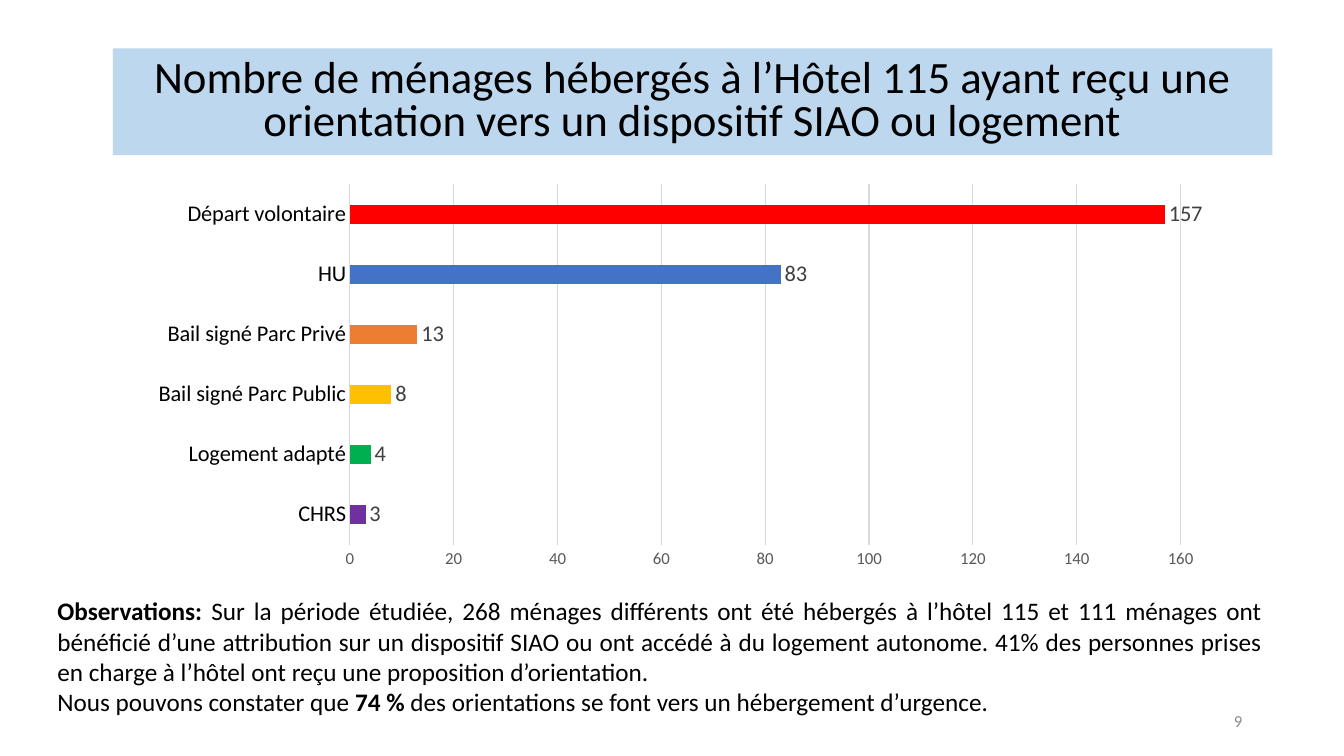
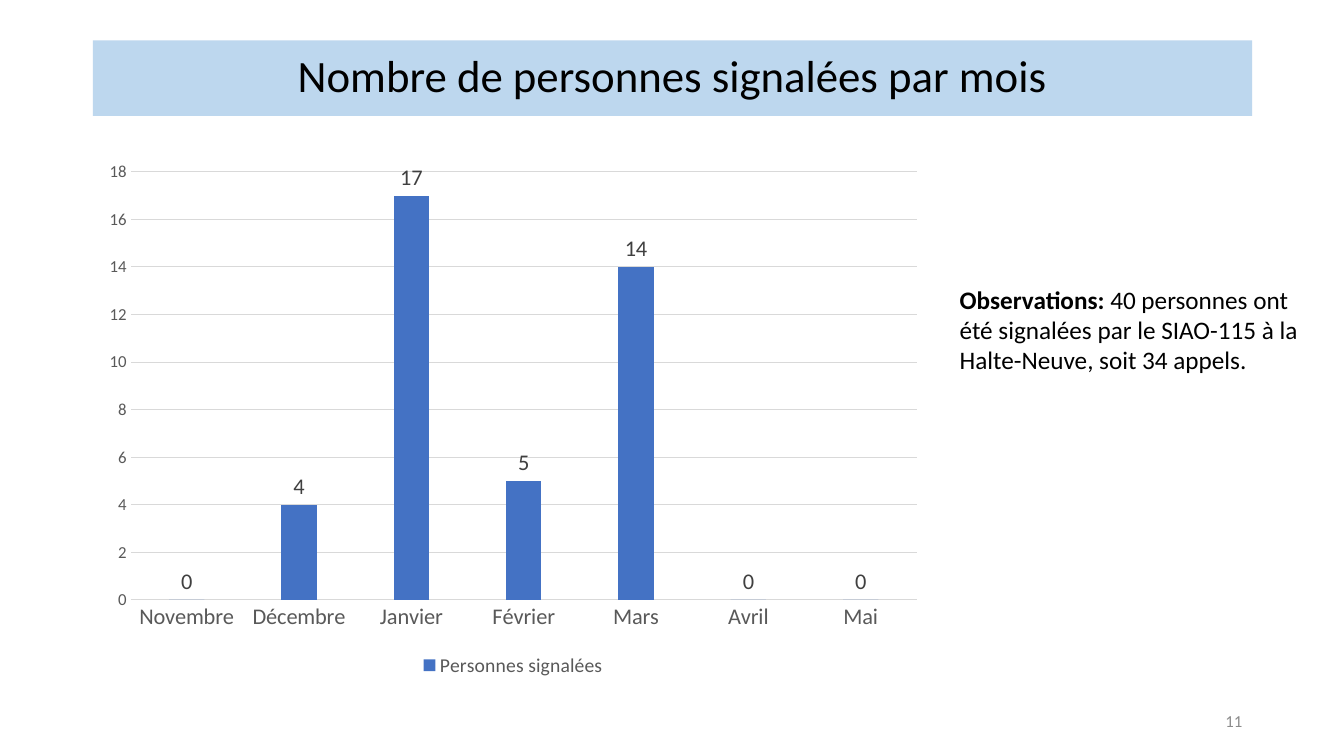
import pptx
import pptx.chart.data
import pptx.dml.color
import pptx.enum.chart
import pptx.enum.text
import pptx.util
from pptx.util import Inches

FONT = "Calibri"
BLACK = "000000"
BAND = "BDD7EE"
GRID = "D9D9D9"
AXIS_TEXT = "595959"
LABEL_TEXT = "404040"
NUMBER_TEXT = "8C8C8C"
BLUE = "4472C4"

ALIGN = pptx.enum.text.PP_ALIGN
CHART_TYPE = pptx.enum.chart.XL_CHART_TYPE


def rgb(value):
    return pptx.dml.color.RGBColor.from_string(value)


def fill_solid(fill, color):
    fill.solid()
    fill.fore_color.rgb = rgb(color)


def set_font(font, size, color):
    font.name = FONT
    font.size = pptx.util.Pt(size)
    font.color.rgb = rgb(color)


def set_line(line, color):
    line.color.rgb = rgb(color)
    line.width = pptx.util.Pt(0.75)


def add_titled_slide(presentation, text, left, top, height, line_spacing):
    slide = presentation.slides.add_slide(presentation.slide_layouts[5])
    title = slide.shapes.title
    title.left, title.top = Inches(left), Inches(top)
    title.width, title.height = Inches(11.5), Inches(height)
    fill_solid(title.fill, BAND)
    frame = title.text_frame
    frame.text = text
    frame.auto_size = pptx.enum.text.MSO_AUTO_SIZE.NONE
    frame.vertical_anchor = pptx.enum.text.MSO_ANCHOR.MIDDLE
    paragraph = frame.paragraphs[0]
    paragraph.alignment = ALIGN.CENTER
    paragraph.line_spacing = line_spacing
    set_font(paragraph.font, 32, BLACK)
    return slide


def add_text(slide, box, paragraphs, size, color, alignment):
    """Add a text box; each paragraph is a list of (text, bold) runs."""
    frame = slide.shapes.add_textbox(*map(Inches, box)).text_frame
    frame.word_wrap = True
    for index, runs in enumerate(paragraphs):
        paragraph = frame.add_paragraph() if index else frame.paragraphs[0]
        paragraph.alignment = alignment
        set_font(paragraph.font, size, color)
        for text, bold in runs:
            run = paragraph.add_run()
            run.text = text
            if bold:
                run.font.bold = True
    return frame


def add_observations(slide, box, paragraphs, alignment):
    add_text(slide, box, paragraphs, 18, BLACK, alignment)


def add_slide_number(slide, number):
    frame = add_text(slide, (9.42, 6.95, 3, 0.4), [[(number, False)]],
                     12, NUMBER_TEXT, ALIGN.RIGHT)
    frame.vertical_anchor = pptx.enum.text.MSO_ANCHOR.MIDDLE


def style_axes(chart, category_color, maximum, step):
    no_tick = pptx.enum.chart.XL_TICK_MARK.NONE
    for axis in (chart.category_axis, chart.value_axis):
        axis.major_tick_mark = axis.minor_tick_mark = no_tick
    category_axis = chart.category_axis
    category_axis.has_major_gridlines = False
    set_font(category_axis.tick_labels.font, 16, category_color)
    set_line(category_axis.format.line, GRID)
    value_axis = chart.value_axis
    value_axis.minimum_scale, value_axis.maximum_scale = 0, maximum
    value_axis.major_unit = step
    value_axis.has_major_gridlines = True
    set_font(value_axis.tick_labels.font, 12, AXIS_TEXT)
    value_axis.format.line.fill.background()
    set_line(value_axis.major_gridlines.format.line, GRID)


def add_bar_chart(slide, chart_type, box, series_name, values,
                  category_color, maximum, step):
    """Add a one-series chart from a mapping of category to value."""
    data = pptx.chart.data.CategoryChartData()
    data.categories = list(values)
    data.add_series(series_name, list(values.values()))
    chart = slide.shapes.add_chart(chart_type, *map(Inches, box), data).chart
    chart.has_title = False
    chart.has_legend = False
    set_font(chart.font, 10, BLACK)
    style_axes(chart, category_color, maximum, step)

    plot = chart.plots[0]
    plot.gap_width = 219
    plot.vary_by_categories = False
    series = plot.series[0]
    series.invert_if_negative = False
    fill_solid(series.format.fill, BLUE)
    labels = series.data_labels
    labels.show_value = True
    labels.position = pptx.enum.chart.XL_LABEL_POSITION.OUTSIDE_END
    set_font(labels.font, 16, LABEL_TEXT)
    return chart


def add_bottom_legend(chart):
    chart.has_legend = True
    chart.legend.position = pptx.enum.chart.XL_LEGEND_POSITION.BOTTOM
    chart.legend.include_in_layout = False
    set_font(chart.legend.font, 14, AXIS_TEXT)


def build_orientation_slide(presentation):
    slide = add_titled_slide(
        presentation,
        "Nombre de ménages hébergés à l’Hôtel 115 ayant reçu une "
        "orientation vers un dispositif SIAO ou logement",
        1.12, 0.48, 1.06, 0.8)
    households = {
        "CHRS": 3, "Logement adapté": 4, "Bail signé Parc Public": 8,
        "Bail signé Parc Privé": 13, "HU": 83, "Départ volontaire": 157,
    }
    chart = add_bar_chart(slide, CHART_TYPE.BAR_CLUSTERED,
                          (1.36, 1.75, 10.69, 3.97), "Ménages",
                          households, BLACK, 160, 20)
    bar_colors = ("7030A0", "00B050", "FFC000", "ED7D31", BLUE, "FF0000")
    for index, color in enumerate(bar_colors):
        point = chart.plots[0].series[0].points[index]
        fill_solid(point.format.fill, color)
    add_observations(slide, (0.47, 5.86, 12.15, 1.31), [
        [("Observations: ", True),
         ("Sur la période étudiée, 268 ménages différents ont été hébergés "
          "à l’hôtel 115 et 111 ménages ont bénéficié d’une attribution sur "
          "un dispositif SIAO ou ont accédé à du logement autonome. 41% des "
          "personnes prises en charge à l’hôtel ont reçu une proposition "
          "d’orientation.", False)],
        [("Nous pouvons constater que ", False), ("74 % ", True),
         ("des orientations se font vers un hébergement d’urgence.", False)],
    ], ALIGN.JUSTIFY)
    add_slide_number(slide, "9")


def build_monthly_slide(presentation):
    slide = add_titled_slide(
        presentation, "Nombre de personnes signalées par mois",
        0.92, 0.4, 0.75, 0.9)
    people = {"Novembre": 0, "Décembre": 4, "Janvier": 17, "Février": 5,
              "Mars": 14, "Avril": 0, "Mai": 0}
    chart = add_bar_chart(slide, CHART_TYPE.COLUMN_CLUSTERED,
                          (0.92, 1.5, 8.34, 5.26), "Personnes signalées",
                          people, AXIS_TEXT, 18, 2)
    chart.plots[0].overlap = -27
    add_bottom_legend(chart)
    add_observations(slide, (9.42, 2.77, 3.57, 1.01), [
        [("Observations:", True),
         (" 40 personnes ont été signalées par le SIAO-115 à la "
          "Halte-Neuve, soit 34 appels.", False)],
    ], ALIGN.LEFT)
    add_slide_number(slide, "11")


def main():
    presentation = pptx.Presentation()
    presentation.slide_width = Inches(13.33)
    presentation.slide_height = Inches(7.5)
    build_orientation_slide(presentation)
    build_monthly_slide(presentation)
    presentation.save("out.pptx")


if __name__ == "__main__":
    main()
